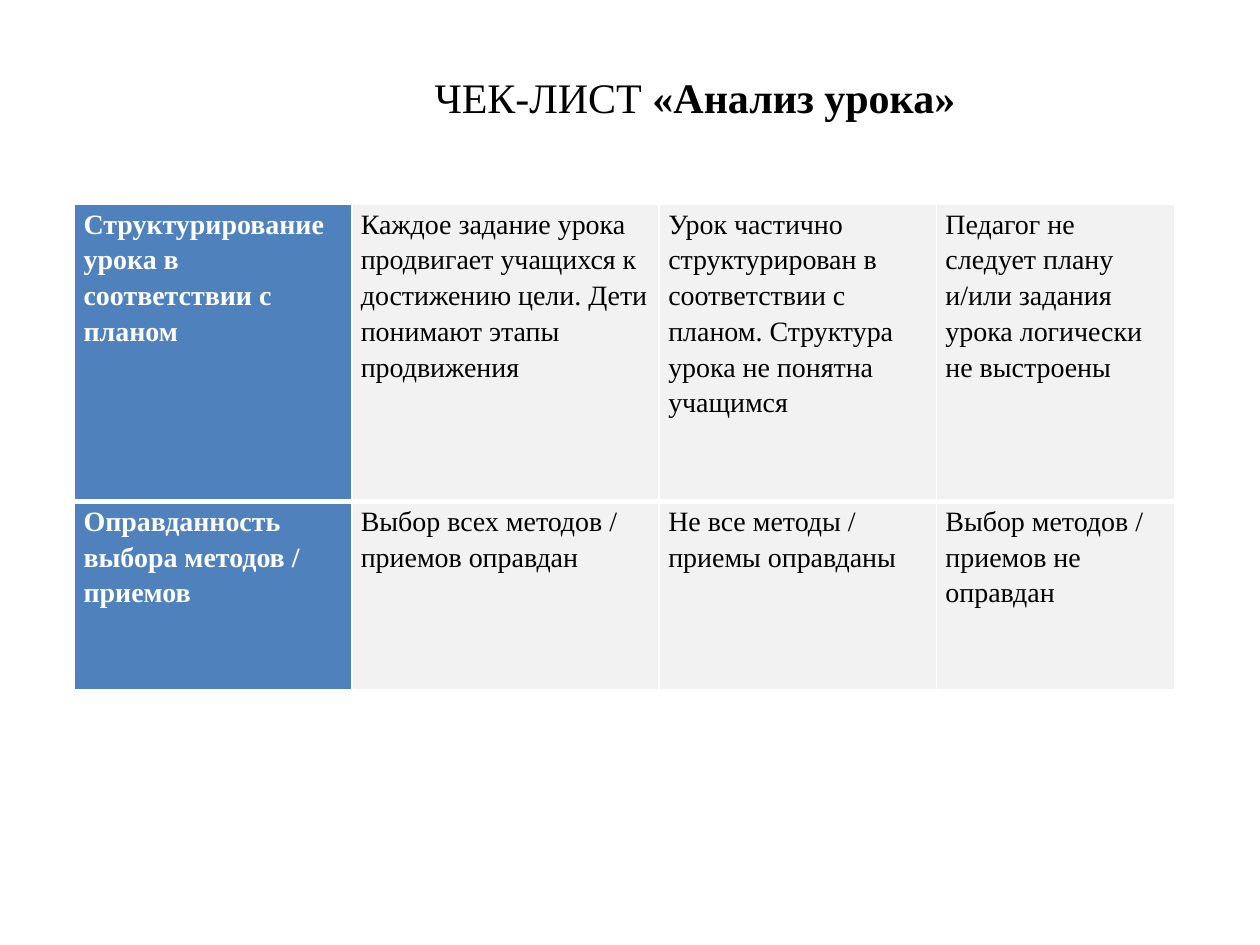
"""Build the lesson analysis checklist slide."""
from lxml.etree import SubElement
from pptx import Presentation
from pptx.dml.color import RGBColor
from pptx.enum.text import MSO_AUTO_SIZE
from pptx.oxml.ns import qn
from pptx.util import Pt

FONT = "Times New Roman"
BLACK = RGBColor(0, 0, 0)
WHITE = RGBColor(255, 255, 255)
BLUE = RGBColor(0x4F, 0x81, 0xBD)
GREY = RGBColor(0xF2, 0xF2, 0xF2)

WIDTHS = [158.4, 175.7, 158.4, 136.1]
HEIGHTS = [169.9, 107.3]
ROWS = [
    [
        "Структурирование урока в соответствии с планом",
        "Каждое задание урока продвигает учащихся к достижению цели. "
        "Дети понимают этапы продвижения",
        "Урок частично структурирован в соответствии с планом. "
        "Структура урока не понятна учащимся",
        "Педагог не следует плану и/или задания урока логически не выстроены",
    ],
    [
        "Оправданность выбора методов / приемов",
        "Выбор всех методов / приемов оправдан",
        "Не все методы / приемы оправданы",
        "Выбор методов / приемов не оправдан",
    ],
]


def style(font, size, color, bold):
    font.name = FONT
    font.size = Pt(size)
    font.color.rgb = color
    font.bold = bold


def add_title(slide):
    box = slide.shapes.add_textbox(Pt(241.2), Pt(37.4), Pt(315.4), Pt(36))
    frame = box.text_frame
    frame.word_wrap = False
    frame.auto_size = MSO_AUTO_SIZE.SHAPE_TO_FIT_TEXT
    for text, bold in [("ЧЕК-ЛИСТ", False), (" «Анализ урока»", True)]:
        run = frame.paragraphs[0].add_run()
        run.text = text
        style(run.font, 24, BLACK, bold)


def set_edges(cell, top, bottom):
    props = cell._tc.get_or_add_tcPr()
    for tag, width in [("lnL", 1), ("lnR", 1), ("lnT", top), ("lnB", bottom)]:
        line = SubElement(props, qn(f"a:{tag}"), w=str(Pt(width)))
        fill = SubElement(line, qn("a:solidFill"))
        SubElement(fill, qn("a:srgbClr"), val=str(WHITE))


def fill_cell(cell, text, head):
    cell.margin_left = cell.margin_right = Pt(5.2)
    cell.margin_top = cell.margin_bottom = Pt(0)
    cell.fill.solid()
    cell.fill.fore_color.rgb = BLUE if head else GREY
    cell.text_frame.text = text
    line = cell.text_frame.paragraphs[0]
    line.line_spacing = 1.15
    style(line.runs[0].font, 16, WHITE if head else BLACK, head)


def add_grid(slide):
    frame = slide.shapes.add_table(
        len(ROWS), len(WIDTHS), Pt(42.6), Pt(116.8), Pt(sum(WIDTHS)), Pt(sum(HEIGHTS))
    )
    table = frame.table
    table.first_row = False
    table.first_col = True
    table.horz_banding = False
    for col, width in zip(table.columns, WIDTHS):
        col.width = Pt(width)
    for r, (height, texts) in enumerate(zip(HEIGHTS, ROWS)):
        table.rows[r].height = Pt(height)
        for c, text in enumerate(texts):
            cell = table.cell(r, c)
            set_edges(cell, 1 if r == 0 else 3, 3 if r == 0 else 1)
            fill_cell(cell, text, c == 0)


def main():
    deck = Presentation()
    deck.slide_width, deck.slide_height = Pt(720), Pt(540)
    slide = deck.slides.add_slide(deck.slide_layouts[6])
    add_title(slide)
    add_grid(slide)
    deck.save("out.pptx")


if __name__ == "__main__":
    main()
